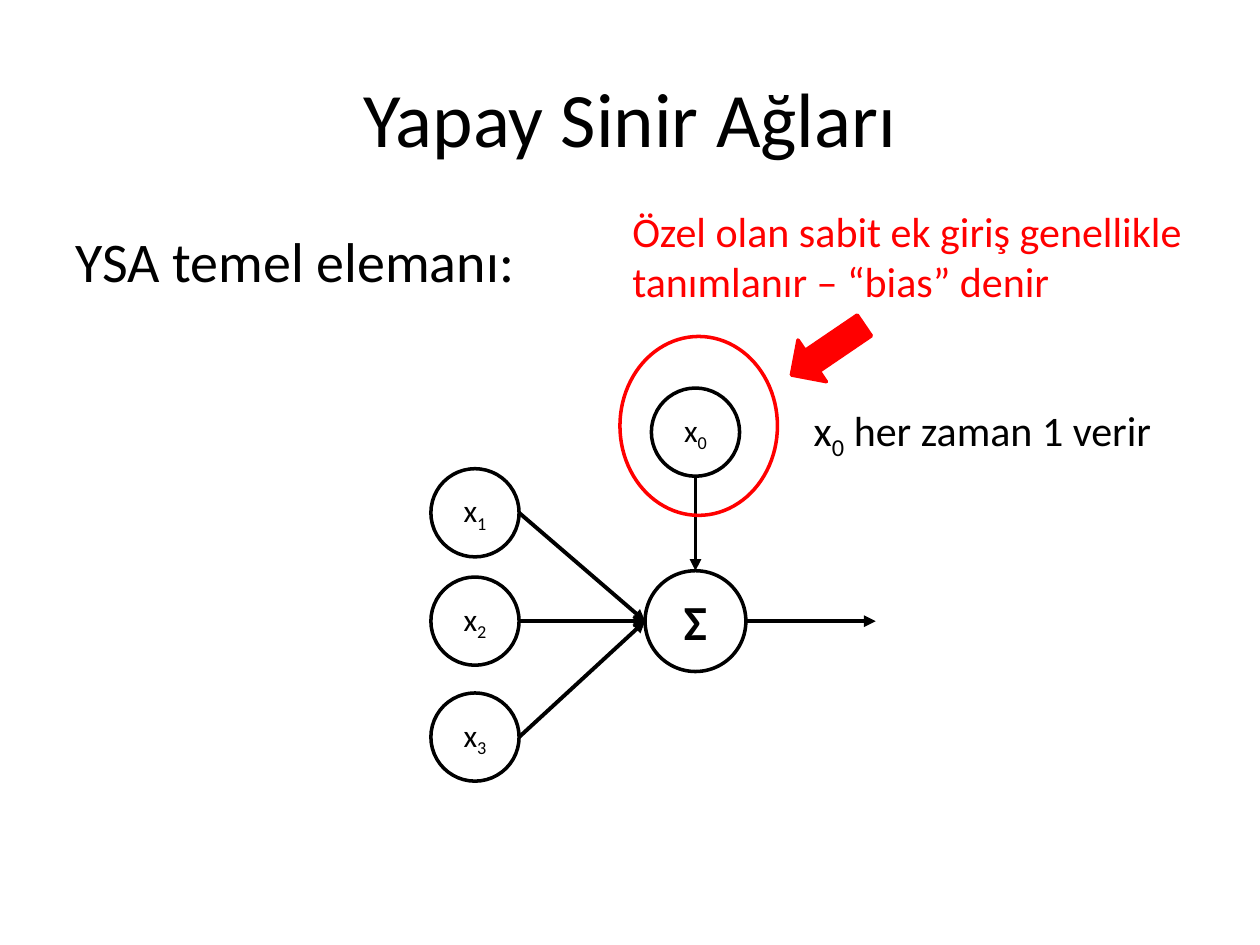
from lxml import etree
from pptx import Presentation
from pptx.dml.color import RGBColor
from pptx.enum.shapes import MSO_CONNECTOR, MSO_SHAPE
from pptx.enum.text import MSO_ANCHOR, MSO_AUTO_SIZE, PP_ALIGN
from pptx.oxml.ns import qn
from pptx.util import Inches, Pt

OVAL, DOWN_ARROW = MSO_SHAPE.OVAL, MSO_SHAPE.DOWN_ARROW
STRAIGHT = MSO_CONNECTOR.STRAIGHT
LEFT, CENTER = PP_ALIGN.LEFT, PP_ALIGN.CENTER
TOP, MIDDLE = MSO_ANCHOR.TOP, MSO_ANCHOR.MIDDLE
FIT_SHAPE = MSO_AUTO_SIZE.SHAPE_TO_FIT_TEXT

BLACK = RGBColor(0x00, 0x00, 0x00)
WHITE = RGBColor(0xFF, 0xFF, 0xFF)
RED = RGBColor(0xFF, 0x00, 0x00)
FONT = "Calibri"

TITLE = "Yapay Sinir Ağları"
HEADING = "YSA temel elemanı:"
BIAS_NOTE = "Özel olan sabit ek giriş genellikle tanımlanır – “bias” denir"
# Each span is (text, is subscript)
BIAS_VALUE = [("x", False), ("0", True), (" her zaman 1 verir", False)]

# Circle centres and diameters, in inches
SUM_CENTER, SUM_SIZE = (5.52, 4.93), 0.8
INPUT_SIZE = 0.7
BIAS_CENTER = (5.52, 3.43)
INPUT_X = 3.77
INPUTS = [("1", 4.07), ("2", 4.93), ("3", 5.85)]
OUTPUT_END = (6.95, 4.93)


def write(shape, spans, size, color=BLACK, align=LEFT, anchor=TOP, bold=False, wrap=True):
    frame = shape.text_frame
    frame.word_wrap = wrap
    frame.vertical_anchor = anchor
    para = frame.paragraphs[0]
    para.alignment = align
    font = para.font
    font.name, font.size, font.bold = FONT, Pt(size), bold
    font.color.rgb = color
    for text, subscript in spans:
        span = para.add_run()
        span.text = text
        if subscript:
            span.font._element.set("baseline", "-25000")
    return para


def add_outlined(shapes, kind, left, top, width, height, line, fill=None):
    shape = shapes.add_shape(kind, Inches(left), Inches(top), Inches(width), Inches(height))
    shape.shadow.inherit = False
    shape.line.color.rgb = line
    shape.line.width = Pt(2)
    if fill is None:
        shape.fill.background()
    else:
        shape.fill.solid()
        shape.fill.fore_color.rgb = fill
    return shape


def add_neuron(shapes, center, diameter, spans, size, bold=False):
    left, top = (middle - diameter / 2 for middle in center)
    neuron = add_outlined(shapes, OVAL, left, top, diameter, diameter, BLACK, WHITE)
    write(neuron, spans, size, align=CENTER, anchor=MIDDLE, bold=bold, wrap=False)


def add_arrow(shapes, start, end):
    arrow = shapes.add_connector(STRAIGHT, *(Inches(value) for value in (*start, *end)))
    arrow.line.color.rgb = BLACK
    arrow.line.width = Pt(2.25)
    etree.SubElement(arrow.line._get_or_add_ln(), qn("a:tailEnd"), type="triangle")
    etree.SubElement(arrow._element.spPr, qn("a:effectLst"))


def add_text(shapes, left, top, width, height, spans, size, **style):
    box = shapes.add_textbox(Inches(left), Inches(top), Inches(width), Inches(height))
    return box, write(box, spans, size, **style)


def add_network(page):
    shapes = page.shapes.add_group_shape().shapes
    sum_x, sum_y = SUM_CENTER
    bias_x, bias_y = BIAS_CENTER
    sum_radius, input_radius = SUM_SIZE / 2, INPUT_SIZE / 2

    add_neuron(shapes, SUM_CENTER, SUM_SIZE, [("Σ", False)], 28, bold=True)
    add_arrow(shapes, (bias_x, bias_y + input_radius), (sum_x, sum_y - sum_radius))
    for _, y in INPUTS:
        add_arrow(shapes, (INPUT_X + input_radius, y), (sum_x - sum_radius, sum_y))
    centers = [(index, (INPUT_X, y)) for index, y in INPUTS] + [("0", BIAS_CENTER)]
    for index, center in centers:
        add_neuron(shapes, center, INPUT_SIZE, [("x", False), (index, True)], 18)
    add_arrow(shapes, (sum_x + sum_radius, sum_y), OUTPUT_END)


def main():
    deck = Presentation()
    deck.slide_width, deck.slide_height = Inches(10), Inches(7.5)
    page = deck.slides.add_slide(deck.slide_layouts[5])
    shapes = page.shapes

    title = shapes.title
    title.left, title.top = Inches(0.5), Inches(0.3)
    title.width, title.height = Inches(9), Inches(1.25)
    write(title, [(TITLE, False)], 44, align=CENTER, anchor=MIDDLE)

    _, heading = add_text(shapes, 0.5, 1.75, 9, 4.95, [(HEADING, False)], 32)
    heading.space_before = Pt(6.4)

    add_network(page)

    note, _ = add_text(shapes, 4.92, 1.58, 4.67, 0.91, [(BIAS_NOTE, False)], 24, color=RED)
    note.text_frame.auto_size = FIT_SHAPE
    add_outlined(shapes, OVAL, 4.92, 2.67, 1.25, 1.42, RED)
    value, _ = add_text(shapes, 6.36, 3.16, 2.92, 0.5, BIAS_VALUE, 24, wrap=False)
    value.text_frame.auto_size = FIT_SHAPE
    pointer = add_outlined(shapes, DOWN_ARROW, 6.37, 2.43, 0.4, 0.7, RED, RED)
    pointer.rotation = 55.8

    deck.save("out.pptx")


if __name__ == "__main__":
    main()
